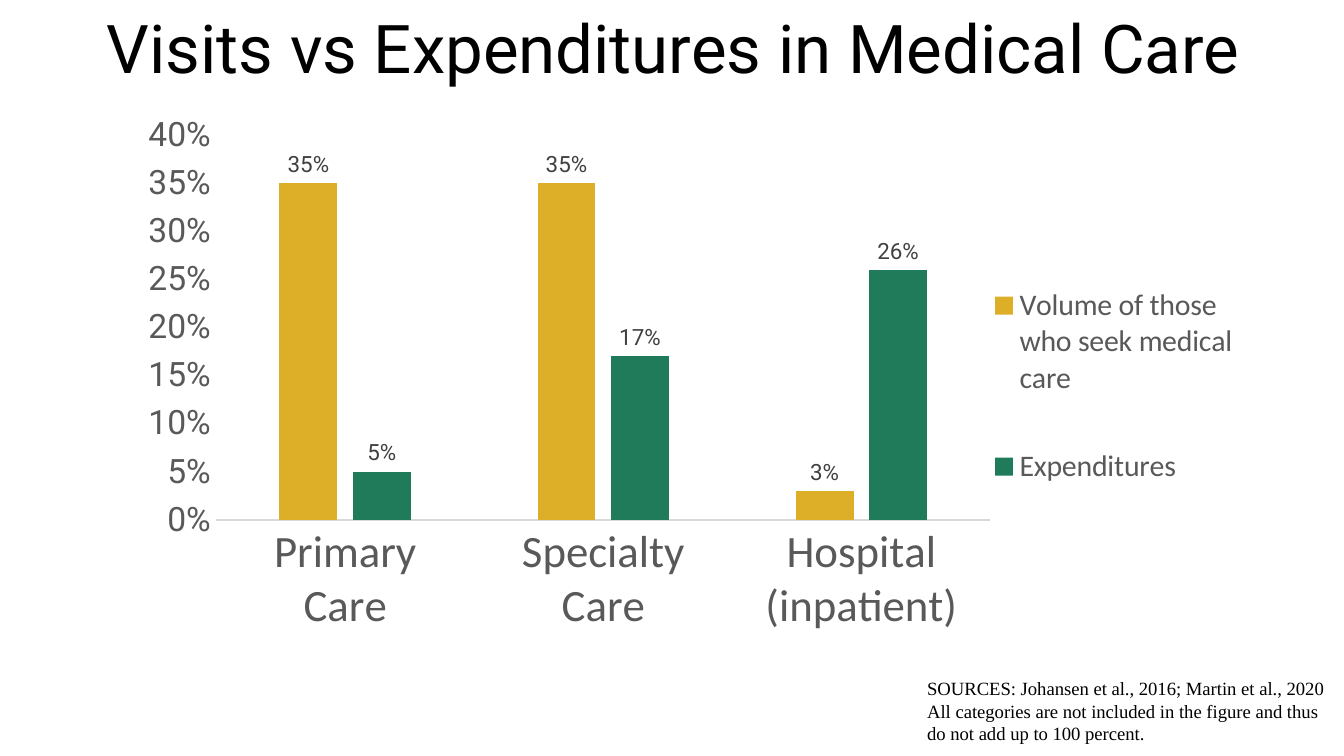
from lxml import etree
from pptx import Presentation
from pptx.chart.data import CategoryChartData
from pptx.dml.color import RGBColor
from pptx.enum.chart import XL_CHART_TYPE, XL_LABEL_POSITION, XL_LEGEND_POSITION, XL_TICK_MARK
from pptx.enum.text import PP_ALIGN
from pptx.oxml.ns import qn
from pptx.util import Inches, Pt

CLUSTERED = XL_CHART_TYPE.COLUMN_CLUSTERED
OUTSIDE_END = XL_LABEL_POSITION.OUTSIDE_END
LEGEND_RIGHT = XL_LEGEND_POSITION.RIGHT
NO_TICK = XL_TICK_MARK.NONE
CENTER = PP_ALIGN.CENTER

BLACK = RGBColor(0x00, 0x00, 0x00)
GRAY = RGBColor(0x59, 0x59, 0x59)
DARK_GRAY = RGBColor(0x40, 0x40, 0x40)
LIGHT_GRAY = RGBColor(0xD9, 0xD9, 0xD9)
GOLD = RGBColor(0xDD, 0xAE, 0x27)
GREEN = RGBColor(0x20, 0x7B, 0x5B)


def set_font(font, name, size, color):
    font.name = name
    font.size = Pt(size)
    font.color.rgb = color


def set_layout(parent, index, box, inner=False):
    """Place a chart part by fractions of the chart: x, y, width, height."""
    for old in parent.findall(qn("c:layout")):
        parent.remove(old)
    layout = etree.Element(qn("c:layout"))
    manual = etree.SubElement(layout, qn("c:manualLayout"))
    values = [("xMode", "edge"), ("yMode", "edge"), *zip("xywh", box)]
    if inner:
        values.insert(0, ("layoutTarget", "inner"))
    for tag, value in values:
        etree.SubElement(manual, qn(f"c:{tag}")).set("val", str(value))
    parent.insert(index, layout)


# Widescreen slide, 16:9
prs = Presentation()
prs.slide_width, prs.slide_height = Inches(10), Inches(10 * 9 / 16)
s = prs.slides.add_slide(prs.slide_layouts[6])

# Sources note
tf = s.shapes.add_textbox(Inches(6.8), Inches(4.99), Inches(3.19), Inches(0.61)).text_frame
tf.word_wrap = True
notes = [
    "SOURCES: Johansen et al., 2016; Martin et al., 2020",
    "All categories are not included in the figure and thus do not add up to 100 percent.",
]
for i, text in enumerate(notes):
    p = tf.add_paragraph() if i else tf.paragraphs[0]
    r = p.add_run()
    r.text = text
    set_font(r.font, "Times New Roman", 10, BLACK)

# Title
tf = s.shapes.add_textbox(Inches(0.51), Inches(0), Inches(9), Inches(0.94)).text_frame
tf.word_wrap = True
p = tf.paragraphs[0]
p.alignment = CENTER
r = p.add_run()
r.text = "Visits vs Expenditures in Medical Care"
set_font(r.font, "Roboto", 36, BLACK)

# Chart data
data = CategoryChartData(number_format="0%")
data.categories = ["Primary\nCare", "Specialty\nCare", "Hospital\n(inpatient)"]
data.add_series("Volume of those who seek medical care", (0.35, 0.35, 0.03))
data.add_series("Expenditures", (0.05, 0.17, 0.26))
chart = s.shapes.add_chart(
    CLUSTERED, Inches(0.94), Inches(0.84), Inches(8.35), Inches(4.15), data
).chart
chart.has_title = False
set_font(chart.font, "Roboto", 10, BLACK)

# Columns and value labels
plot = chart.plots[0]
set_layout(plot._element.getparent(), 0, (0.08, 0.04, 0.69, 0.69), inner=True)
plot.vary_by_categories = False
plot.gap_width = 219
plot.overlap = -27
for series, color in zip(plot.series, (GOLD, GREEN)):
    series.format.fill.solid()
    series.format.fill.fore_color.rgb = color
    labels = series.data_labels
    labels.show_value = True
    labels.position = OUTSIDE_END
    labels.number_format = "0%"
    labels.number_format_is_linked = False
    set_font(labels.font, "Roboto", 12, DARK_GRAY)

# Axes
for axis, name, size in (
    (chart.category_axis, "Calibri", 24),
    (chart.value_axis, "Roboto", 18),
):
    axis.has_major_gridlines = False
    axis.major_tick_mark = axis.minor_tick_mark = NO_TICK
    set_font(axis.tick_labels.font, name, size, GRAY)
line = chart.category_axis.format.line
line.color.rgb = LIGHT_GRAY
line.width = Pt(0.75)
axis = chart.value_axis
axis.format.line.fill.background()
axis.minimum_scale = 0
axis.tick_labels.number_format = "0%"
axis.tick_labels.number_format_is_linked = False

# Legend
chart.has_legend = True
legend = chart.legend
legend.position = LEGEND_RIGHT
legend.include_in_layout = False
set_font(legend.font, "Calibri", 16, GRAY)
set_layout(legend._element, 1, (0.76, 0.22, 0.24, 0.54))

prs.save("out.pptx")
